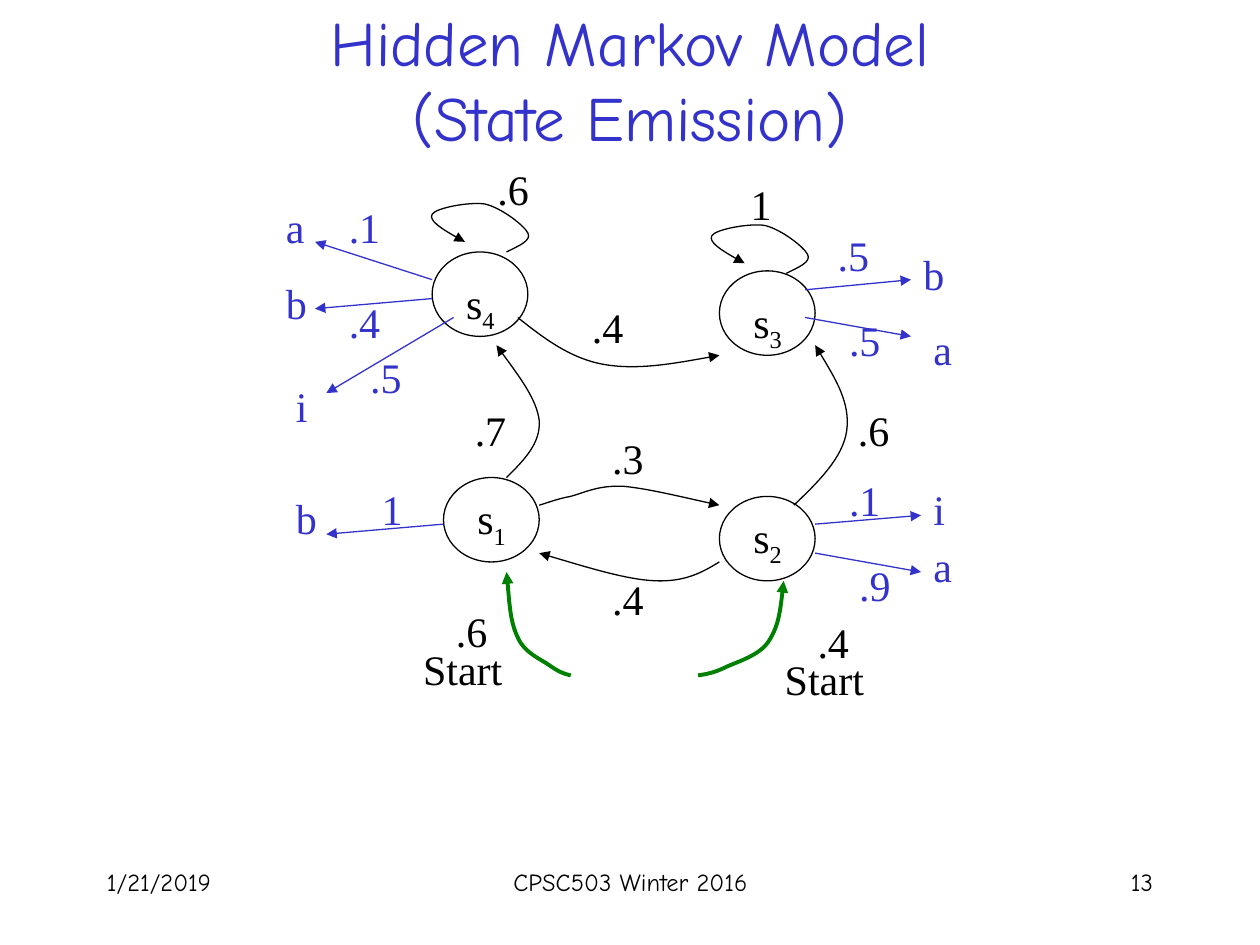
from dataclasses import dataclass

from lxml import etree
from pptx import Presentation, util as u
from pptx.dml.color import RGBColor
from pptx.enum import shapes, text
from pptx.oxml.ns import qn


@dataclass(frozen=True)
class Theme:
    ink: str = "000000"
    accent: str = "3333CC"
    start: str = "008000"
    heading_font: str = "Comic Neue"
    body_font: str = "Times New Roman"
    title_size: int = 36
    label_size: int = 24
    footer_size: int = 14
    thin: float = 0.75
    thick: float = 2.25


LABEL_WIDTHS = {"a": 3.5, "b": 3.7, "i": 3.0, "1": 3.7, "Start": 8.4}
PROBABILITY_WIDTH, STATE_LABEL_WIDTH, LABEL_HEIGHT = 4.6, 4.5, 4.5
STATE_SIZE = (7.6, 6.7)

STATES = [
    ("4", (34.3, 20), 1.5),
    ("3", (57.1, 21.5), 1.5),
    ("1", (35.2, 37.9), 0.7),
    ("2", (57.1, 39.4), 0.7),
]
LOOP = [(5.9, 0), (6.9, -0.5), (7.9, -0.9), (7.6, -1.5), (7.3, -2.1), (5.5, -3.5),
        (4.2, -3.8), (3, -4), (0.3, -3.5), (0, -3), (-0.3, -2.5), (1.1, -1.6), (2.6, -0.8)]
LOOPS = [((34.3, 20), ".6", (38.5, 12.5)), ((56.5, 21.7), "1", (58.6, 13.7))]
TRANSITIONS = [
    (".7", (36.7, 31.6), [(40.2, 37.9), (41.6, 36.5), (42.9, 35.2), (42.8, 33.4),
                          (42.6, 31.7), (41, 29.6), (39.4, 27.4)]),
    (".4", (46, 23.4), [(41.1, 25.2), (43.1, 26.8), (45.2, 28.4), (47.8, 28.9),
                        (50.5, 29.4), (53.8, 28.8), (57.1, 28.2)]),
    (".6", (67.1, 31.6), [(63, 40.1), (65, 38.2), (66.9, 36.3), (67.2, 34.2),
                          (67.5, 32), (66.1, 29.7), (64.7, 27.4)]),
    (".3", (47.6, 33.8), [(42.8, 40.1), (43.5, 39.9), (44.2, 39.6), (45.3, 39.4),
                          (46.4, 39.1), (47.5, 38.5), (49.5, 38.6), (51.5, 38.8),
                          (54.3, 39.5), (57.1, 40.1)]),
    (".4", (47.6, 45), [(57.1, 44.6), (55.8, 45.4), (54.4, 46.2), (52, 46.1),
                        (49.7, 46), (46.2, 44.9), (42.8, 43.9)]),
]
STARTS = [
    (".6", (35.2, 47.6), (32.6, 50.6),
     [(45.3, 53.6), (44.8, 53.5), (44.3, 53.3), (43.6, 52.8), (42.9, 52.3),
      (41.6, 51.8), (41.1, 50.6), (40.5, 49.4), (40.4, 47.4), (40.2, 45.4)]),
    (".4", (63.9, 48.4), (61.3, 51.4),
     [(55.4, 53.6), (56.1, 53.5), (56.7, 53.4), (57.7, 52.9), (58.6, 52.5),
      (60.3, 52), (61, 50.9), (61.8, 49.7), (62, 47.9), (62.2, 46.1)]),
]
EMISSIONS = [
    ("a", (21.7, 15.5), ".1", (26.7, 15.5), (34.3, 22.2), (25, 19.2)),
    ("b", (21.7, 21.5), ".4", (26.7, 23), (34.3, 23.7), (25, 24.5)),
    ("i", (22.5, 29.7), ".5", (28.4, 27.4), (36, 25.2), (25.9, 31.2)),
    ("b", (22.5, 38.6), "1", (29.3, 37.9), (35.2, 41.6), (25.9, 42.4)),
    ("b", (72.3, 19.2), ".5", (65.5, 17.7), (63.9, 23), (72.3, 22.2)),
    ("a", (73.1, 25.2), ".5", (66.4, 24.5), (63.9, 25.2), (72.3, 26.7)),
    ("i", (73.1, 37.9), ".1", (66.4, 37.2), (64.7, 41.6), (73.1, 40.9)),
    ("a", (73.1, 42.4), ".9", (67.2, 43.9), (64.7, 43.9), (73.1, 45.4)),
]
FOOTERS = [
    ("1/21/2019", 7.5, 20.8, text.PP_ALIGN.LEFT),
    ("CPSC503 Winter 2016", 34.2, 31.7, text.PP_ALIGN.CENTER),
    ("13", 71.7, 20.8, text.PP_ALIGN.RIGHT),
]


class Diagram:
    def __init__(self, deck, theme):
        self.theme = theme
        self.slide = deck.slides.add_slide(deck.slide_layouts[6])
        self.column = deck.slide_width / 100
        self.row = deck.slide_height / 75

    def place(self, point):
        return round(point[0] * self.column), round(point[1] * self.row)

    def add_words(self, paragraph, words, font, size, color, baseline=None):
        run = paragraph.add_run()
        run.text = words
        run.font.name = font
        run.font.size = u.Pt(size)
        run.font.color.rgb = RGBColor.from_string(color)
        if baseline:
            run.font._element.set("baseline", str(baseline))

    def frame(self, at, size, wrap=True):
        frame = self.slide.shapes.add_textbox(*self.place(at), *self.place(size)).text_frame
        frame.word_wrap = wrap
        return frame

    def heading(self, lines, at, size):
        frame = self.frame(at, size)
        frame.vertical_anchor = text.MSO_ANCHOR.MIDDLE
        paragraph = frame.paragraphs[0]
        paragraph.alignment = text.PP_ALIGN.CENTER
        for index, line in enumerate(lines):
            if index:
                paragraph.add_line_break()
            self.add_words(paragraph, line, self.theme.heading_font,
                           self.theme.title_size, self.theme.accent)

    def footer(self, words, left, width, alignment):
        paragraph = self.frame((left, 68.3), (width, 5)).paragraphs[0]
        paragraph.alignment = alignment
        self.add_words(paragraph, words, self.theme.heading_font,
                       self.theme.footer_size, self.theme.ink)

    def label(self, words, at, color, subscript="", width=None):
        width = width or LABEL_WIDTHS.get(words, PROBABILITY_WIDTH)
        frame = self.frame(at, (width, LABEL_HEIGHT), wrap=words == "Start")
        frame.auto_size = text.MSO_AUTO_SIZE.SHAPE_TO_FIT_TEXT
        paragraph = frame.paragraphs[0]
        style = self.theme.body_font, self.theme.label_size, color
        self.add_words(paragraph, words, *style)
        if subscript:
            self.add_words(paragraph, subscript, *style, baseline=-25000)

    def stroke(self, shape, color, width, arrow=False):
        shape.line.color.rgb = RGBColor.from_string(color)
        shape.line.width = u.Pt(width)
        if arrow:
            outline = shape.line._get_or_add_ln()
            etree.SubElement(outline, qn("a:tailEnd"), type="triangle")

    def state(self, number, at, drop):
        circle = self.slide.shapes.add_shape(
            shapes.MSO_SHAPE.OVAL, *self.place(at), *self.place(STATE_SIZE))
        circle.shadow.inherit = False
        circle.fill.background()
        self.stroke(circle, self.theme.ink, self.theme.thin)
        self.label("s", (at[0] + 1.7, at[1] + drop), self.theme.ink,
                   number, STATE_LABEL_WIDTH)

    def curve(self, points, color, width):
        first, *rest = map(self.place, points)
        builder = self.slide.shapes.build_freeform(*first)
        builder.add_line_segments(rest, close=False)
        shape = builder.convert_to_shape()
        shape.shadow.inherit = False
        shape.fill.background()
        self.stroke(shape, color, width, arrow=True)
        segments = list(shape._element.iter(qn("a:lnTo")))
        outline = segments[0].getparent()
        for start in range(0, len(segments), 3):
            bezier = etree.SubElement(outline, qn("a:cubicBezTo"))
            for segment in segments[start:start + 3]:
                bezier.append(segment[0])
                outline.remove(segment)

    def arrow(self, begin, end, color):
        line = self.slide.shapes.add_connector(
            shapes.MSO_CONNECTOR.STRAIGHT, *self.place(begin), *self.place(end))
        self.stroke(line, color, self.theme.thin, arrow=True)
        etree.SubElement(line._element.spPr, qn("a:effectLst"))


def main():
    deck = Presentation()
    deck.slide_width, deck.slide_height = u.Inches(10), u.Inches(7.5)
    theme = Theme()
    diagram = Diagram(deck, theme)
    diagram.heading(["Hidden Markov Model", "(State Emission)"], (7.5, 0), (85, 12.5))
    for footer in FOOTERS:
        diagram.footer(*footer)
    for state in STATES:
        diagram.state(*state)
    for (left, top), probability, at in LOOPS:
        diagram.curve([(left + x, top + y) for x, y in LOOP], theme.ink, theme.thin)
        diagram.label(probability, at, theme.ink)
    for probability, at, points in TRANSITIONS:
        diagram.curve(points, theme.ink, theme.thin)
        diagram.label(probability, at, theme.ink)
    for probability, at, start_at, points in STARTS:
        diagram.curve(points, theme.start, theme.thick)
        diagram.label(probability, at, theme.ink)
        diagram.label("Start", start_at, theme.ink)
    for symbol, symbol_at, probability, at, begin, end in EMISSIONS:
        diagram.arrow(begin, end, theme.accent)
        diagram.label(symbol, symbol_at, theme.accent)
        diagram.label(probability, at, theme.accent)
    deck.save("out.pptx")


if __name__ == "__main__":
    main()
